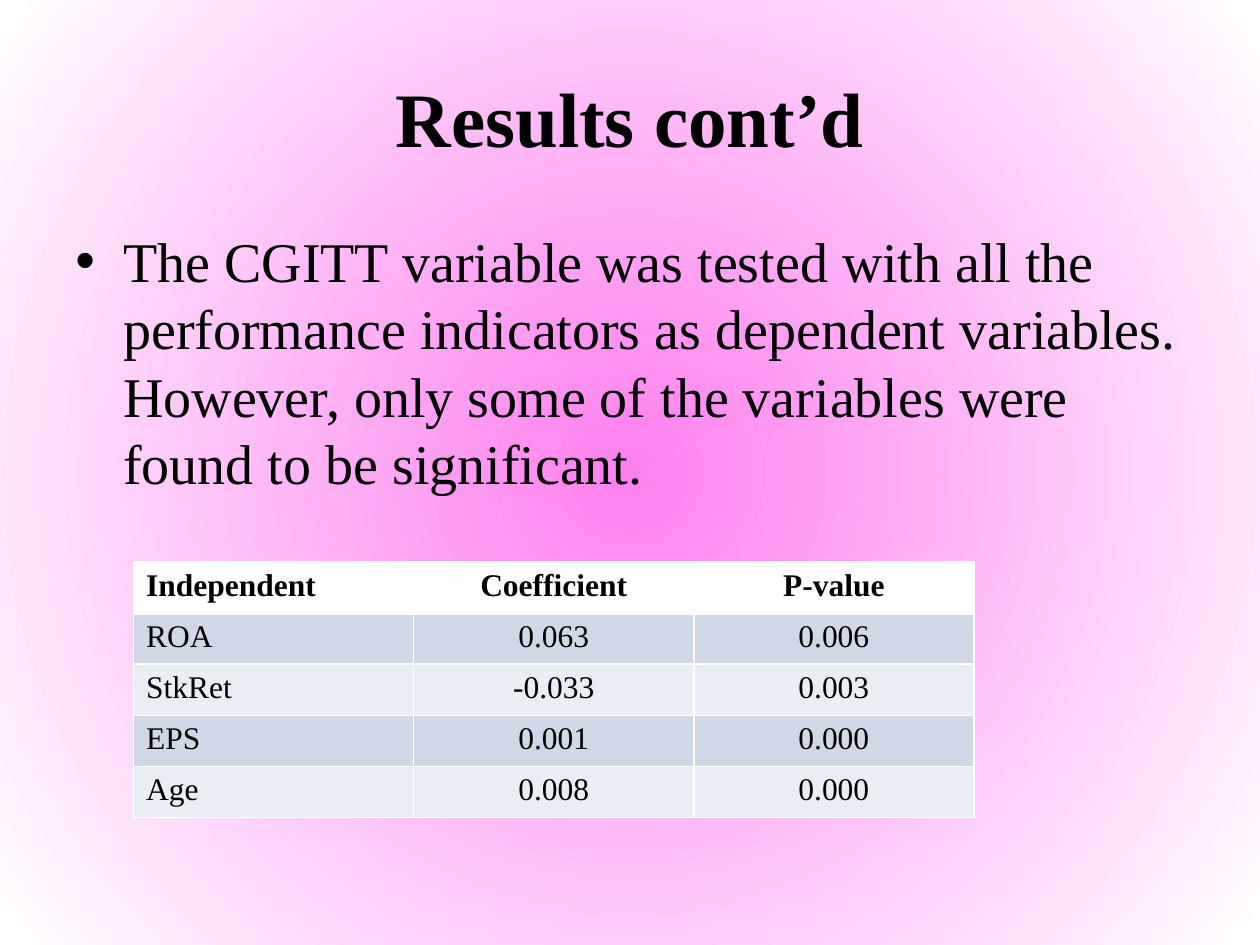
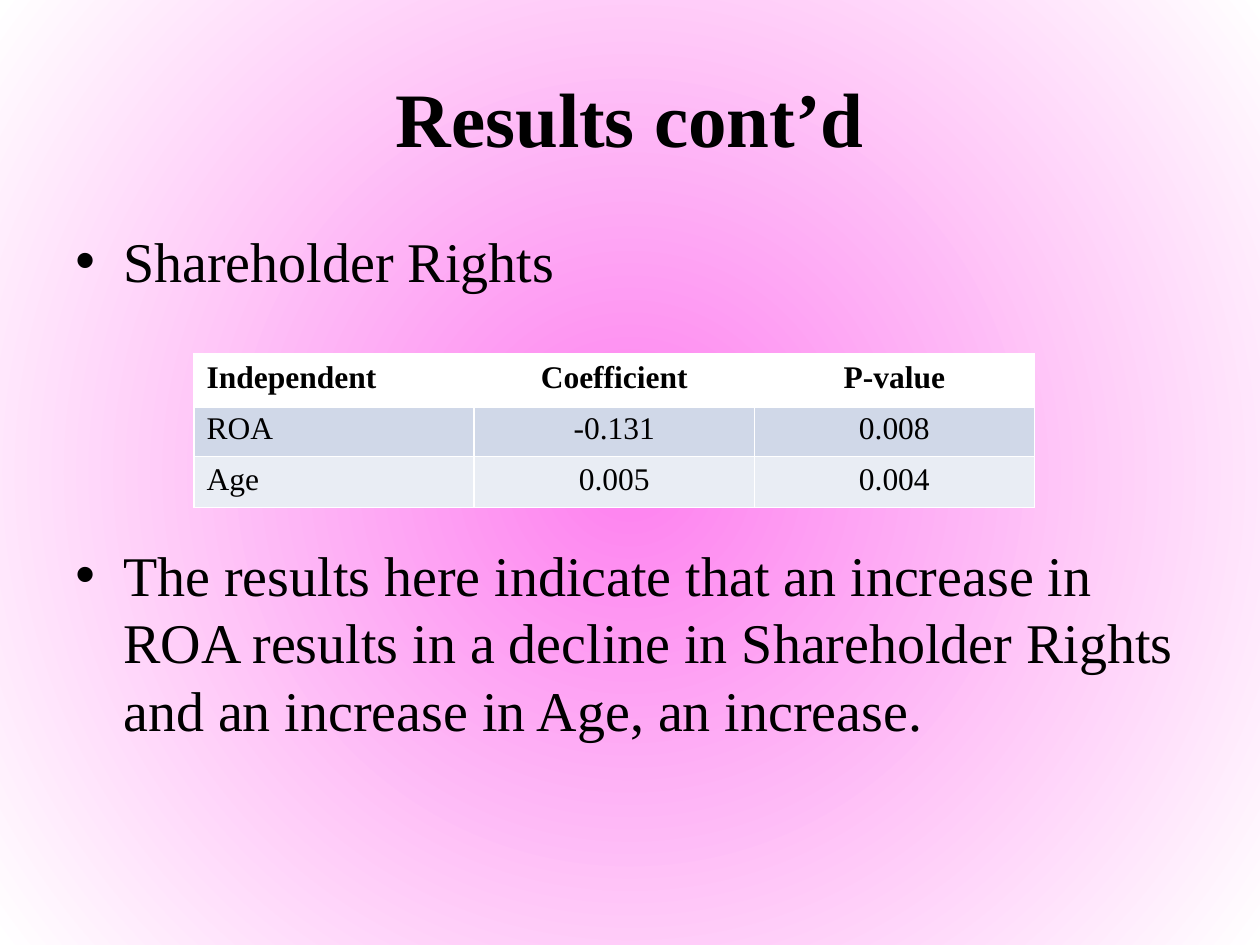
import pptx
import pptx.util
import pptx.dml.color
import pptx.enum.text
import pptx.oxml
import pptx.oxml.ns
from lxml import etree

Inches = pptx.util.Inches
Pt = pptx.util.Pt
qn = pptx.oxml.ns.qn
ALIGN = pptx.enum.text.PP_ALIGN
ANCHOR = pptx.enum.text.MSO_ANCHOR

COLORS = {
    "glow": "FE80EF",
    "paper": "FFFFFF",
    "ink": "000000",
    "band_dark": "D0D8E8",
    "band_light": "E9EDF4",
}
HEADINGS = ("Independent", "Coefficient", "P-value")


def rgb(name):
    return pptx.dml.color.RGBColor.from_string(COLORS[name])


class Deck:
    font = "Times New Roman"
    left, width = Inches(0.5), Inches(9)

    def __init__(self):
        self.presentation = pptx.Presentation()
        self.presentation.slide_width = Inches(10)
        self.presentation.slide_height = Inches(7.5)
        self.slide = None
        self.radial_background()

    def radial_background(self):
        master = self.presentation.slide_master
        fill = master.background.fill
        fill.gradient()
        for stop, position, name in zip(fill.gradient_stops, (0, 1), ("glow", "paper")):
            stop.position = position
            stop.color.rgb = rgb(name)
        gradient = next(master.element.iter(qn("a:gradFill")))
        gradient.remove(gradient.find(qn("a:lin")))
        circle = etree.SubElement(gradient, qn("a:path"), {"path": "circle"})
        etree.SubElement(circle, qn("a:fillToRect"), dict.fromkeys("ltrb", "50000"))

    def new_slide(self, title):
        self.slide = self.presentation.slides.add_slide(self.presentation.slide_layouts[6])
        frame = self.text_frame(0.3, 1.25)
        frame.vertical_anchor = ANCHOR.MIDDLE
        self.set_text(frame.paragraphs[0], title, 44, bold=True, align=ALIGN.CENTER)

    def text_frame(self, top, height):
        box = self.slide.shapes.add_textbox(self.left, Inches(top), self.width, Inches(height))
        box.text_frame.word_wrap = True
        return box.text_frame

    def set_text(self, paragraph, text, size, bold=False, align=ALIGN.LEFT):
        paragraph.text = text
        paragraph.alignment = align
        for run in paragraph.runs:
            run.font.name = self.font
            run.font.size = Pt(size)
            run.font.bold = bold
            run.font.color.rgb = rgb("ink")

    def bullets(self, texts, gap=6.4):
        frame = self.text_frame(1.75, 4.95)
        for index, text in enumerate(texts):
            paragraph = frame.add_paragraph() if index else frame.paragraphs[0]
            self.set_text(paragraph, text, 32)
            paragraph.space_before = Pt(gap if index else 6.4)
            properties = paragraph._p.get_or_add_pPr()
            indent = Inches(0.38)
            properties.set("marL", str(indent))
            properties.set("indent", str(-indent))
            etree.SubElement(properties, qn("a:buFont"), typeface="Arial")
            etree.SubElement(properties, qn("a:buChar"), char="•")

    def results_table(self, left, top, height, results):
        rows = [HEADINGS, *results]
        table = self.slide.shapes.add_table(
            len(rows), len(HEADINGS), Inches(left), Inches(top), Inches(6.67), Inches(height)
        ).table
        table.horz_banding = False
        for row_index, row in enumerate(rows):
            header = row_index == 0
            band = "paper" if header else ("band_light", "band_dark")[row_index % 2]
            for column, text in enumerate(row):
                cell = table.cell(row_index, column)
                align = ALIGN.CENTER if column else ALIGN.LEFT
                self.set_text(cell.text_frame.paragraphs[0], text, 18, header, align)
                self.borders(cell, top=3 if row_index == 1 else 1, bottom=3 if header else 1)
                cell.fill.solid()
                cell.fill.fore_color.rgb = rgb(band)

    def borders(self, cell, top, bottom):
        properties = cell._tc.get_or_add_tcPr()
        for side, points in (("L", 1), ("R", 1), ("T", top), ("B", bottom)):
            line = etree.SubElement(properties, qn(f"a:ln{side}"), w=str(Pt(points)))
            solid = etree.SubElement(line, qn("a:solidFill"))
            etree.SubElement(solid, qn("a:srgbClr"), val=COLORS["paper"])


def main():
    deck = Deck()

    deck.new_slide("Results cont’d")
    deck.bullets([
        "The CGITT variable was tested with all the performance indicators as dependent "
        "variables. However, only some of the variables were found to be significant."
    ])
    deck.results_table(1.06, 4.46, 2.03, [
        ("ROA", "0.063", "0.006"),
        ("StkRet", "-0.033", "0.003"),
        ("EPS", "0.001", "0.000"),
        ("Age", "0.008", "0.000"),
    ])

    deck.new_slide("Results cont’d")
    deck.bullets([
        "Shareholder Rights",
        "The results here indicate that an increase in ROA results in a decline in "
        "Shareholder Rights and an increase in Age, an increase.",
    ], gap=141)
    deck.results_table(1.54, 2.81, 1.22, [
        ("ROA", "-0.131", "0.008"),
        ("Age", "0.005", "0.004"),
    ])

    deck.presentation.save("out.pptx")


if __name__ == "__main__":
    main()
